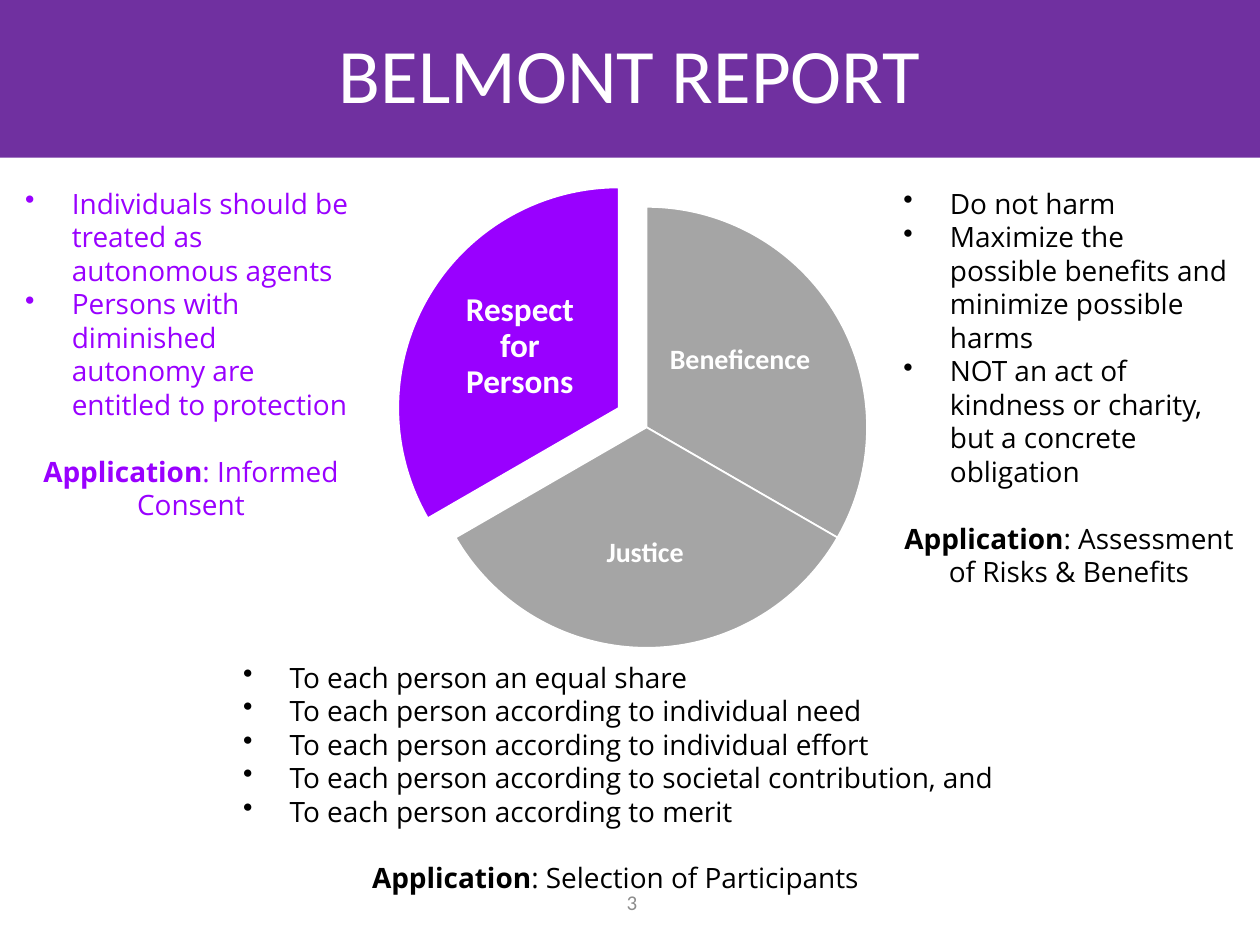
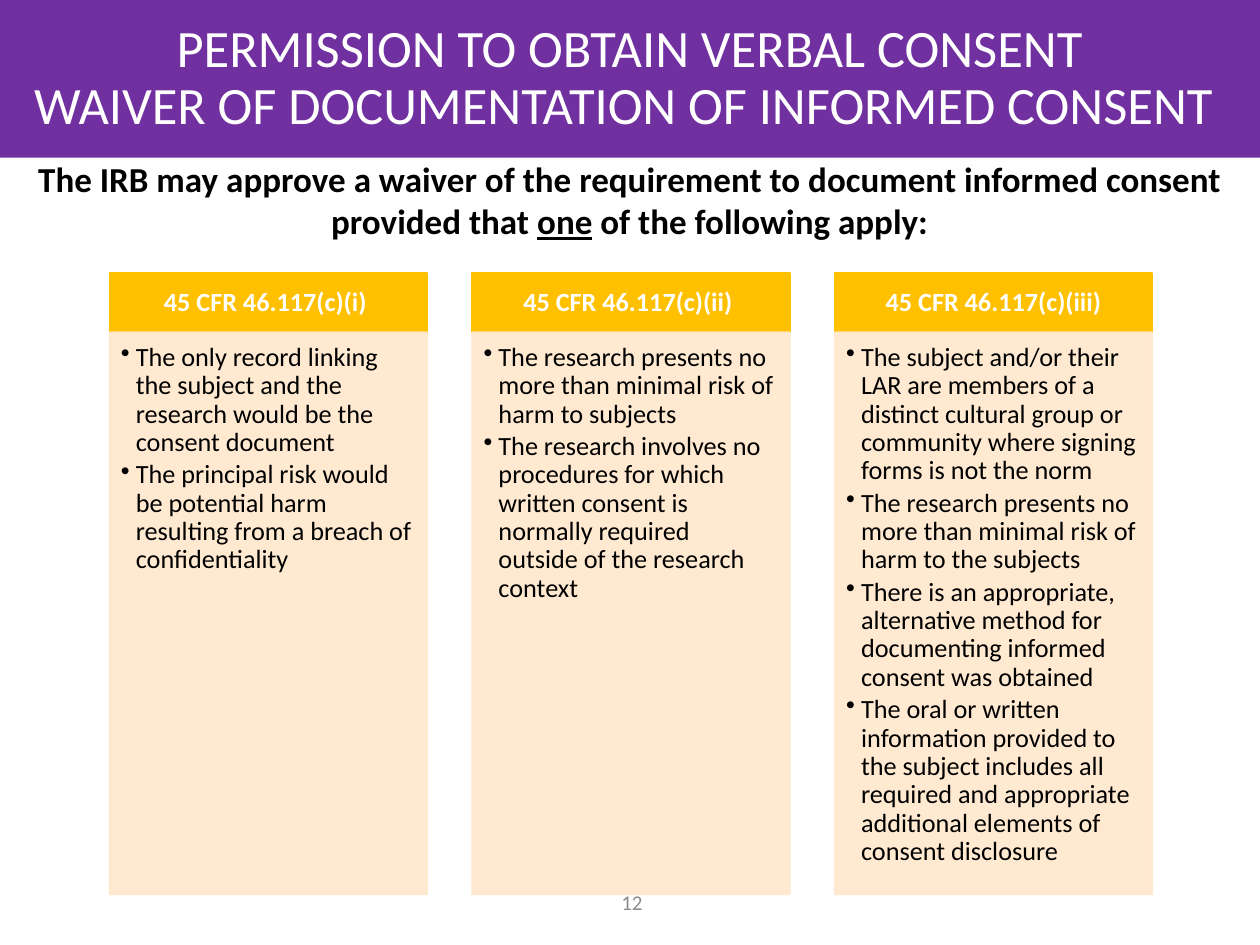
import dataclasses

import pptx
import pptx.dml.color
import pptx.enum.shapes
import pptx.enum.text
import pptx.oxml.ns
import pptx.util
from lxml import etree

Cm = pptx.util.Cm
Pt = pptx.util.Pt
Shapes = pptx.enum.shapes.MSO_SHAPE
Align = pptx.enum.text.PP_ALIGN
Anchor = pptx.enum.text.MSO_ANCHOR
qn = pptx.oxml.ns.qn


@dataclasses.dataclass(frozen=True)
class TextStyle:
    size: float
    color: str
    font: str = "Calibri"
    bold: bool = False
    align: Align = Align.CENTER
    line_spacing: object = 0.9
    space_before: float = 0
    space_after: float = 0
    bullet_indent: float = 0


@dataclasses.dataclass(frozen=True)
class Theme:
    white: str = "FFFFFF"
    black: str = "000000"
    band: str = "7030A0"
    highlight: str = "9900FF"
    muted: str = "A5A5A5"
    column_head: str = "FFC000"
    column_body: str = "FFE8CC"
    column_opacity: int = 90
    title: TextStyle = TextStyle(44, "FFFFFF")
    long_title: TextStyle = TextStyle(30, "FFFFFF")
    number: TextStyle = TextStyle(12, "8C8C8C", line_spacing=1.0)
    label: TextStyle = TextStyle(16, "FFFFFF", bold=True)
    main_label: TextStyle = TextStyle(19, "FFFFFF", bold=True)
    point: TextStyle = TextStyle(16, "000000", "Open Sans", align=Align.LEFT,
                                 line_spacing=Pt(19.15), bullet_indent=0.94)
    application: TextStyle = TextStyle(16, "000000", "Open Sans",
                                       line_spacing=Pt(19.15), space_before=19.15)
    lead: TextStyle = TextStyle(20, "000000", bold=True, line_spacing=1.0)
    head: TextStyle = TextStyle(15, "FFFFFF", bold=True)
    body: TextStyle = TextStyle(15, "000000", align=Align.LEFT, space_after=2.25,
                                bullet_indent=0.3)


THEME = Theme()
SLIDE_WIDTH, SLIDE_HEIGHT = 25.4, 19.05
BAND_HEIGHT = 3.18
NO_INSETS = (0, 0, 0, 0)


def rgb(value):
    return pptx.dml.color.RGBColor.from_string(value)


def set_frame(shape, insets, anchor):
    frame = shape.text_frame
    frame.word_wrap = True
    frame.vertical_anchor = anchor
    (frame.margin_left, frame.margin_top,
     frame.margin_right, frame.margin_bottom) = map(Cm, insets)


def add_span(para, text, style, bold=None, underline=None):
    span = para.add_run()
    span.text = text
    span.font.name = style.font
    span.font.size = Pt(style.size)
    span.font.bold = style.bold if bold is None else bold
    span.font.underline = underline
    span.font.color.rgb = rgb(style.color)


def add_para(box, style, text=""):
    """Fill the first paragraph if it is still empty, else append one."""
    frame = box.text_frame
    para = frame.paragraphs[0]
    if para.runs:
        para = frame.add_paragraph()
    para.alignment = style.align
    para.line_spacing = style.line_spacing
    para.space_before = Pt(style.space_before)
    para.space_after = Pt(style.space_after)
    if style.bullet_indent:
        properties = para._p.get_or_add_pPr()
        indent = Cm(style.bullet_indent)
        properties.set("marL", str(indent))
        properties.set("indent", str(-indent))
        etree.SubElement(properties, qn("a:buChar")).set("char", "•")
    if text:
        add_span(para, text, style)
    return para


def add_box(page, place, insets=NO_INSETS, anchor=Anchor.TOP):
    box = page.shapes.add_textbox(*map(Cm, place))
    set_frame(box, insets, anchor)
    return box


def add_block(page, kind, place, fill, line=None, opacity=100):
    block = page.shapes.add_shape(kind, *map(Cm, place))
    block.shadow.inherit = False
    block.fill.solid()
    block.fill.fore_color.rgb = rgb(fill)
    if line:
        block.line.color.rgb = rgb(line)
        block.line.width = Pt(1)
    else:
        block.line.fill.background()
    if opacity < 100:
        for color in block._element.spPr.iter(qn("a:srgbClr")):
            etree.SubElement(color, qn("a:alpha")).set("val", str(opacity * 1000))
    return block


def add_page(deck, title_lines, style, number):
    """Blank page with the title band and the page number."""
    page = deck.slides.add_slide(deck.slide_layouts[6])
    band = add_block(page, Shapes.RECTANGLE, (0, 0, SLIDE_WIDTH, BAND_HEIGHT), THEME.band)
    set_frame(band, (0.25, 0.13, 0.25, 0.13), Anchor.MIDDLE)
    para = add_para(band, style)
    for index, line in enumerate(title_lines):
        if index:
            para.add_line_break()
        add_span(para, line, style)
    box = add_box(page, (11.89, 17.68, 1.7, 1.02), anchor=Anchor.MIDDLE)
    add_para(box, THEME.number, str(number))
    return page


def add_pie_sector(page, left, top, start, end, fill):
    """Sector between two angles in degrees, clockwise from three o'clock."""
    diameter = 8.89
    sector = add_block(page, Shapes.PIE, (left, top, diameter, diameter), fill, THEME.white)
    for index, angle in enumerate((start, end)):
        sector.adjustments[index] = angle * 0.6


def add_label(page, place, text, style):
    box = add_box(page, place, (0.06,) * 4, Anchor.MIDDLE)
    add_para(box, style, text)


def add_principle(page, place, points, application, color):
    box = add_box(page, place)
    point_style = dataclasses.replace(THEME.point, color=color)
    for point in points:
        add_para(box, point_style, point)
    style = dataclasses.replace(THEME.application, color=color)
    para = add_para(box, style)
    add_span(para, "Application", style, bold=True)
    add_span(para, ": " + application, style)


def add_column(page, left, heading, points):
    top, width, head_height, body_height = 5.51, 6.4, 1.19, 11.33
    head = add_block(page, Shapes.RECTANGLE, (left, top, width, head_height),
                     THEME.column_head, THEME.column_head)
    set_frame(head, (0.3, 0.18, 0.3, 0.18), Anchor.MIDDLE)
    add_para(head, THEME.head, heading)
    body = add_block(page, Shapes.RECTANGLE, (left, top + head_height, width, body_height),
                     THEME.column_body, THEME.column_body, THEME.column_opacity)
    set_frame(body, (0.23, 0.23, 0.3, 0.33), Anchor.TOP)
    for point in points:
        add_para(body, THEME.body, point)


def build_belmont_page(deck):
    page = add_page(deck, ["BELMONT REPORT"], THEME.title, 3)
    add_pie_sector(page, 8.59, 4.17, 270, 30, THEME.muted)
    add_label(page, (13.41, 5.79, 3.02, 2.97), "Beneficence", THEME.label)
    add_pie_sector(page, 8.59, 4.17, 30, 150, THEME.muted)
    add_label(page, (11, 9.78, 4.01, 2.74), "Justice", THEME.label)
    add_pie_sector(page, 8.03, 3.78, 150, 270, THEME.highlight)
    add_label(page, (8.97, 5.51, 3.02, 2.97), "Respect for Persons", THEME.main_label)

    add_principle(page, (18.21, 3.76, 6.68, 7.52), [
        "Do not harm",
        "Maximize the possible benefits and minimize possible harms",
        "NOT an act of kindness or charity, but a concrete obligation",
    ], "Assessment of Risks & Benefits", THEME.black)
    add_principle(page, (0.51, 3.76, 6.68, 6.83), [
        "Individuals should be treated as autonomous agents",
        "Persons with diminished autonomy are entitled to protection",
    ], "Informed Consent", THEME.highlight)
    shares = ["an equal share", "according to individual need",
              "according to individual effort",
              "according to societal contribution, and", "according to merit"]
    add_principle(page, (4.9, 13.31, 15.16, 4.78),
                  ["To each person " + share for share in shares],
                  "Selection of Participants ", THEME.black)


def build_waiver_page(deck):
    page = add_page(deck, ["PERMISSION TO OBTAIN VERBAL CONSENT",
                           "WAIVER OF DOCUMENTATION OF INFORMED CONSENT "],
                    THEME.long_title, 12)
    para = add_para(add_box(page, (0.58, BAND_HEIGHT, 24.23, 1.7)), THEME.lead,
                    "The IRB may approve a waiver of the requirement to document "
                    "informed consent provided that ")
    add_span(para, "one", THEME.lead, underline=True)
    add_span(para, " of the following apply:", THEME.lead)

    columns = [
        ("45 CFR 46.117(c)(i) ", [
            "The only record linking the subject and the research would be the "
            "consent document",
            "The principal risk would be potential harm resulting from a breach of "
            "confidentiality",
        ]),
        ("45 CFR 46.117(c)(ii) ", [
            "The research presents no more than minimal risk of harm to subjects",
            "The research involves no procedures for which written consent is "
            "normally required outside of the research context",
        ]),
        ("45 CFR 46.117(c)(iii)", [
            "The subject and/or their LAR are members of a distinct cultural group "
            "or community where signing forms is not the norm",
            "The research presents no more than minimal risk of harm to the subjects",
            "There is an appropriate, alternative method for documenting informed "
            "consent was obtained",
            "The oral or written information provided to the subject includes all "
            "required and appropriate additional elements of consent disclosure",
        ]),
    ]
    for index, (heading, points) in enumerate(columns):
        add_column(page, 2.21 + index * 7.31, heading, points)


def main():
    deck = pptx.Presentation()
    deck.slide_width, deck.slide_height = Cm(SLIDE_WIDTH), Cm(SLIDE_HEIGHT)
    build_belmont_page(deck)
    build_waiver_page(deck)
    deck.save("out.pptx")


if __name__ == "__main__":
    main()
